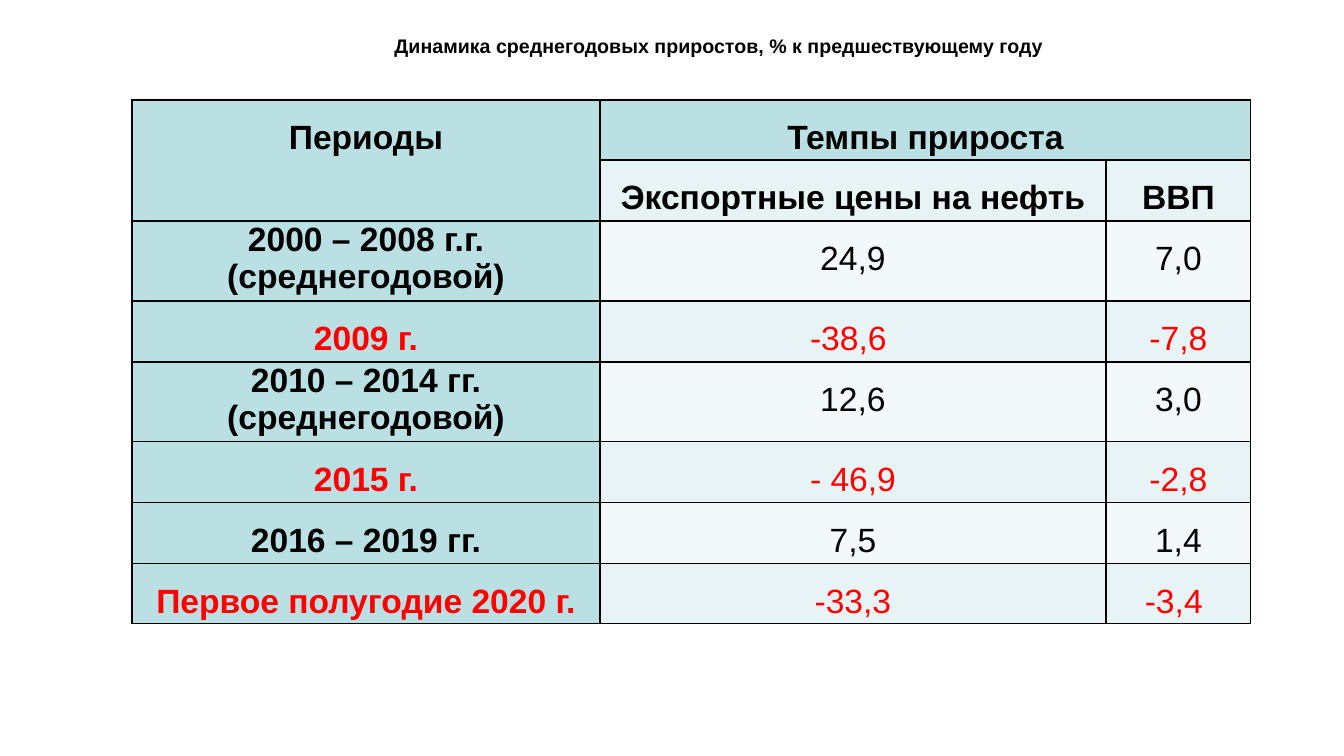
from lxml import etree
from pptx import Presentation
from pptx import util as u
from pptx.dml.color import RGBColor
from pptx.enum import text
from pptx.oxml.ns import qn

PX = 914400 / 100.8
BLACK, RED = "000000", "FF0000"
TEAL, PALE, PALEST = "BBE0E3", "E7F3F4", "F3F9FA"


def px(n):
    return u.Emu(round(n * PX))


def rgb(value):
    return RGBColor.from_string(value)


class Deck:
    font = "Arial"

    def __init__(self, width, height):
        self.prs = Presentation()
        self.prs.slide_width, self.prs.slide_height = px(width), px(height)
        self.s = self.prs.slides.add_slide(self.prs.slide_layouts[6])

    def label(self, tf, words, size, color=BLACK, bold=False, spacing=1.0):
        p = tf.paragraphs[0]
        p.alignment, p.line_spacing = text.PP_ALIGN.CENTER, spacing
        r = p.add_run()
        r.text = words
        style = {"name": self.font, "size": u.Pt(size), "bold": bold, "italic": False}
        for key, value in style.items():
            setattr(r.font, key, value)
        r.font.color.rgb = rgb(color)
        return p

    def title(self, box, words, size, indent):
        tf = self.s.shapes.add_textbox(*map(px, box)).text_frame
        tf.word_wrap = False
        tf.vertical_anchor = text.MSO_ANCHOR.MIDDLE
        p = self.label(tf, words, size, bold=True)
        p._p.get_or_add_pPr().set("indent", str(px(indent)))

    def table(self, left, top, widths, heights):
        shape = self.s.shapes.add_table(len(heights), len(widths), px(left), px(top),
                                        px(sum(widths)), px(sum(heights)))
        table = shape.table
        for col, width in zip(table.columns, widths):
            col.width = px(width)
        for row, height in zip(table.rows, heights):
            row.height = px(height)
        return table

    def cell(self, cell, words, fill, **style):
        margins = {"margin_left": px(7), "margin_right": px(7),
                   "margin_top": 0, "margin_bottom": 0}
        for key, value in margins.items():
            setattr(cell, key, value)
        cell.fill.solid()
        cell.fill.fore_color.rgb = rgb(fill)
        self.border(cell)
        if words:
            self.label(cell.text_frame, words, 24, **style)

    def border(self, cell):
        tc_pr = cell._tc.get_or_add_tcPr()
        for i, side in enumerate(("a:lnL", "a:lnR", "a:lnT", "a:lnB")):
            ln = etree.Element(qn(side), w=str(u.Pt(1)))
            fill = etree.SubElement(ln, qn("a:solidFill"))
            etree.SubElement(fill, qn("a:srgbClr"), val=BLACK)
            tc_pr.insert(i, ln)


def main():
    deck = Deck(1344, 756)

    # Growth table: two header rows, then one row per period
    rows = [
        ("Периоды", "Темпы прироста", ""),
        ("", "Экспортные цены на нефть", "ВВП"),
        ("2000 – 2008 г.г. (среднегодовой)", "24,9", "7,0"),
        ("2009 г.", "-38,6 ", "-7,8"),
        ("2010 – 2014 гг. (среднегодовой)", "12,6", "3,0"),
        ("2015 г.", "- 46,9", "-2,8"),
        ("2016 – 2019 гг.", "7,5", "1,4"),
        ("Первое полугодие 2020 г.", "-33,3", "-3,4 "),
    ]
    table = deck.table(132, 100, [468, 506, 145], [60, 61, 80, 61, 80, 61, 61, 60])
    table.cell(0, 0).merge(table.cell(1, 0))
    table.cell(0, 1).merge(table.cell(0, 2))
    for i, row in enumerate(rows):
        decline = i > 1 and row[1].startswith("-")
        for j, words in enumerate(row):
            fill = TEAL if i == 0 or j == 0 else PALE if i % 2 else PALEST
            deck.cell(table.cell(i, j), words, fill,
                      color=RED if decline else BLACK,
                      bold=i < 2 or j == 0,
                      spacing=1.0 if "среднегодовой" in words else 1.5)

    # Heading
    deck.title((37, 21, 1344, 50),
               "Динамика среднегодовых приростов, % к предшествующему году", 14, 20)

    deck.prs.save("out.pptx")


if __name__ == "__main__":
    main()
